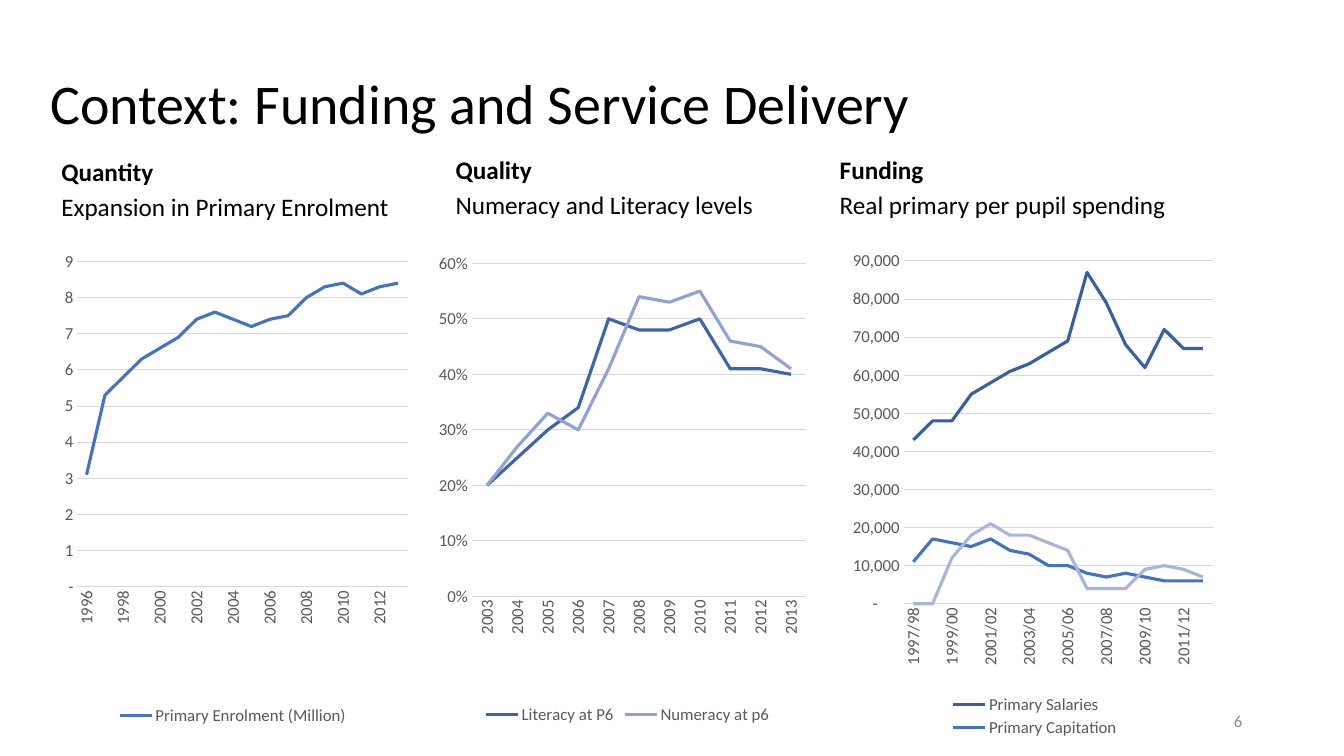
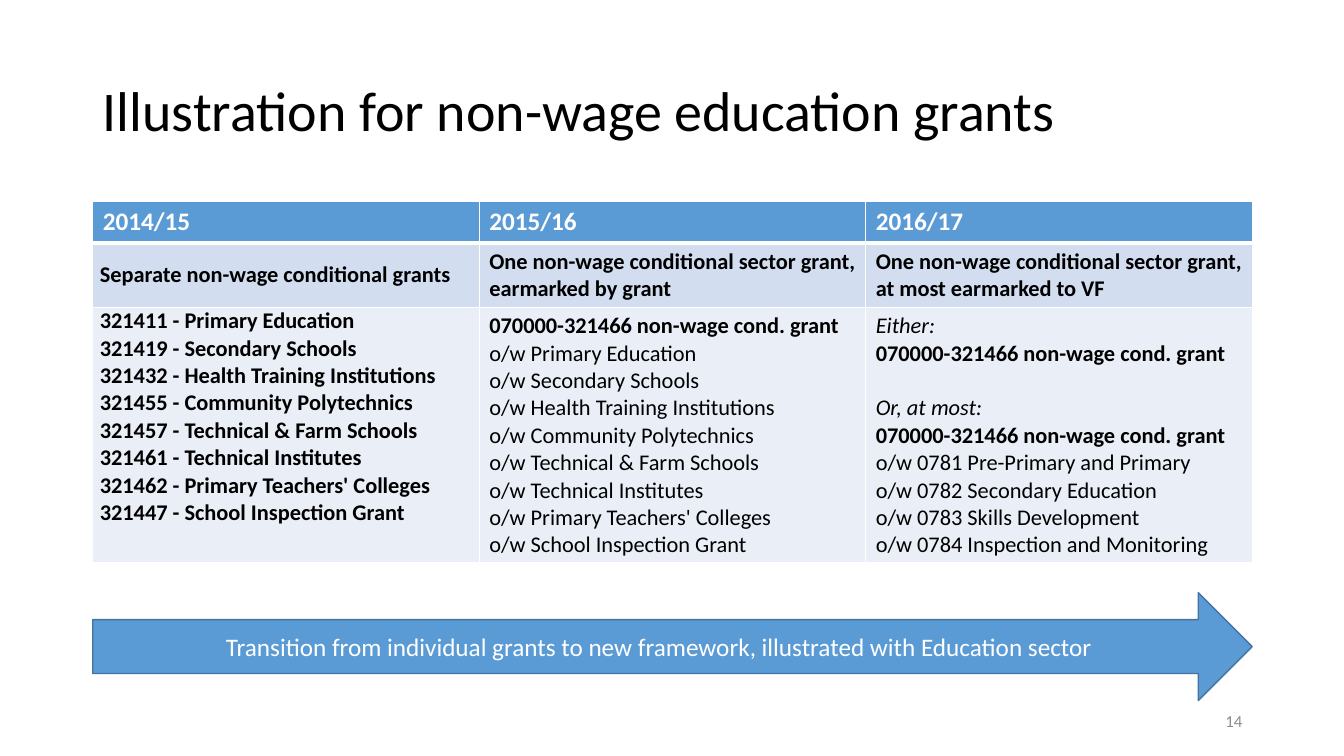
from lxml import etree
from pptx import Presentation
from pptx.chart.data import CategoryChartData
from pptx.dml.color import RGBColor
from pptx.enum import chart as ce, shapes, text
from pptx.oxml import parse_xml
from pptx.oxml.ns import nsdecls, qn
from pptx.util import Inches, Pt

BLACK = RGBColor(0x00, 0x00, 0x00)
WHITE = RGBColor(0xFF, 0xFF, 0xFF)
NUMBER_GREY = RGBColor(0x8C, 0x8C, 0x8C)
AXIS_GREY = RGBColor(0x59, 0x59, 0x59)
GRID_GREY = RGBColor(0xD9, 0xD9, 0xD9)
HEADER_BLUE = RGBColor(0x5B, 0x9B, 0xD5)
ARROW_EDGE = RGBColor(0x43, 0x73, 0x9E)
BAND_DARK = RGBColor(0xD2, 0xDE, 0xEF)
BAND_LIGHT = RGBColor(0xEA, 0xEF, 0xF7)
SERIES_BLUE = RGBColor(0x44, 0x72, 0xC4)
SALARY_BLUE = RGBColor(0x38, 0x5F, 0xA3)
DEVELOPMENT_BLUE = RGBColor(0xA8, 0xB5, 0xDB)
LITERACY_BLUE = RGBColor(0x3C, 0x65, 0xAE)
NUMERACY_BLUE = RGBColor(0x90, 0xA2, 0xD3)


def set_font(font, size, color, bold=False, italic=False):
    font.name, font.size, font.bold, font.italic = "Calibri", Pt(size), bold, italic
    font.color.rgb = color


def set_layout(parent, index, frame, inner=False):
    """Give a plot area or legend a fixed place, in fractions of the chart."""
    for old in parent.findall(qn("c:layout")):
        parent.remove(old)
    target = '<c:layoutTarget val="inner"/>' if inner else ""
    modes = '<c:xMode val="edge"/><c:yMode val="edge"/>'
    sizes = "".join(f'<c:{key} val="{value}"/>' for key, value in zip("xywh", frame))
    parent.insert(index, parse_xml(
        f'<c:layout {nsdecls("c")}><c:manualLayout>{target}{modes}{sizes}'
        "</c:manualLayout></c:layout>"))


def set_borders(cell, bottom):
    props = cell._tc.get_or_add_tcPr()
    for side, width in (("L", 1), ("R", 1), ("T", 1), ("B", bottom)):
        line = etree.SubElement(props, qn(f"a:ln{side}"), w=str(Pt(width)))
        fill = etree.SubElement(line, qn("a:solidFill"))
        etree.SubElement(fill, qn("a:srgbClr"), val=str(WHITE))


class Deck:
    def __init__(self):
        self.deck = Presentation()
        self.deck.slide_width, self.deck.slide_height = Inches(13.33), Inches(7.5)
        self.page = None

    def add_page(self, title, left, top, number):
        self.page = self.deck.slides.add_slide(self.deck.slide_layouts[5])
        box = self.page.shapes.title
        box.left, box.top = Inches(left), Inches(top)
        box.width, box.height = Inches(11.5), Inches(1.45)
        box.text_frame.text = title
        box.text_frame.vertical_anchor = text.MSO_ANCHOR.MIDDLE
        para = box.text_frame.paragraphs[0]
        para.alignment, para.line_spacing = text.PP_ALIGN.LEFT, 0.9
        set_font(para.font, 40, BLACK)
        # Page number
        frame = self.add_box(9.42, 6.95, 3, 0.4)
        frame.vertical_anchor = text.MSO_ANCHOR.MIDDLE
        para = frame.paragraphs[0]
        para.text, para.alignment = number, text.PP_ALIGN.RIGHT
        set_font(para.font, 12, NUMBER_GREY)

    def add_box(self, left, top, width, height):
        box = self.page.shapes.add_textbox(
            Inches(left), Inches(top), Inches(width), Inches(height))
        box.text_frame.word_wrap = True
        return box.text_frame

    def add_heading(self, left, top, width, heading, subtitle):
        frame = self.add_box(left, top, width, 0.8)
        frame.text = f"{heading}\n{subtitle}"
        first, second = frame.paragraphs
        set_font(first.font, 18, BLACK, bold=True)
        set_font(second.font, 18, BLACK)
        second.space_before = Pt(3.6)

    def add_line_chart(self, place, categories, series, plot, number_format,
                       maximum, step, label_skip=1, legend_place=None):
        data = CategoryChartData()
        data.categories = categories
        for name, _, values in series:
            data.add_series(name, values)
        chart = self.page.shapes.add_chart(
            ce.XL_CHART_TYPE.LINE, *map(Inches, place), data).chart
        chart.has_title = False
        set_font(chart.font, 10, BLACK)
        set_layout(chart._chartSpace.chart.plotArea, 0, plot, inner=True)
        chart.plots[0].vary_by_categories = False
        for item, (_, color, _) in zip(chart.plots[0].series, series):
            item.smooth = False
            item.format.line.color.rgb = color
            item.format.line.width = Pt(2.25)
        # Axes
        for axis in (chart.category_axis, chart.value_axis):
            axis.major_tick_mark = axis.minor_tick_mark = ce.XL_TICK_MARK.NONE
            set_font(axis.tick_labels.font, 12, AXIS_GREY)
        years, scale = chart.category_axis, chart.value_axis
        years.format.line.color.rgb = GRID_GREY
        years.format.line.width = Pt(0.75)
        years._element.find(qn("c:txPr")).find(qn("a:bodyPr")).set("rot", "-5400000")
        skip = parse_xml(f'<c:tickLblSkip {nsdecls("c")} val="{label_skip}"/>')
        years._element.find(qn("c:noMultiLvlLbl")).addprevious(skip)
        scale.minimum_scale, scale.maximum_scale = 0, maximum
        scale.major_unit = step
        scale.format.line.fill.background()
        scale.major_gridlines.format.line.color.rgb = GRID_GREY
        scale.major_gridlines.format.line.width = Pt(0.75)
        scale.tick_labels.number_format = number_format
        scale.tick_labels.number_format_is_linked = False
        # Legend
        chart.has_legend = True
        chart.legend.position = ce.XL_LEGEND_POSITION.BOTTOM
        chart.legend.include_in_layout = False
        set_font(chart.legend.font, 12, AXIS_GREY)
        if legend_place:
            set_layout(chart.legend._element, 1, legend_place)

    def add_table(self, left, top, width, heights, rows, fills):
        table = self.page.shapes.add_table(
            len(rows), len(rows[0]), Inches(left), Inches(top),
            Inches(width), Inches(sum(heights))).table
        for index, (cells, height, fill) in enumerate(zip(rows, heights, fills)):
            table.rows[index].height = Inches(height)
            for column, lines in enumerate(cells):
                cell = table.cell(index, column)
                set_borders(cell, 3 if index == 0 else 1)
                cell.fill.solid()
                cell.fill.fore_color.rgb = fill
                if index and column == 0:
                    cell.margin_left = cell.margin_right = Inches(0.07)
                    cell.margin_top = cell.margin_bottom = 0
                    if index == 1:
                        cell.vertical_anchor = text.MSO_ANCHOR.MIDDLE
                self.fill_cell(cell, lines, index == 0)

    def fill_cell(self, cell, lines, header):
        cell.text_frame.text = "\n".join(line for line, _ in lines)
        for para, (_, style) in zip(cell.text_frame.paragraphs, lines):
            set_font(para.font, 18 if header else 16, WHITE if header else BLACK,
                     bold="bold" in style, italic="italic" in style)
            if "gap" in style:
                para.space_before = Pt(19.5)

    def add_arrow(self, left, top, width, height, label):
        arrow = self.page.shapes.add_shape(
            shapes.MSO_SHAPE.RIGHT_ARROW, Inches(left), Inches(top),
            Inches(width), Inches(height))
        arrow.shadow.inherit = False
        arrow.fill.solid()
        arrow.fill.fore_color.rgb = HEADER_BLUE
        arrow.line.color.rgb = ARROW_EDGE
        arrow.line.width = Pt(1)
        arrow.text_frame.text = label
        arrow.text_frame.vertical_anchor = text.MSO_ANCHOR.MIDDLE
        para = arrow.text_frame.paragraphs[0]
        para.alignment = text.PP_ALIGN.CENTER
        set_font(para.font, 18, WHITE)


def build_context(deck):
    deck.add_page("Context: Funding and Service Delivery", 0.4, 0.33, "6")
    deck.add_heading(0.51, 1.5, 3.5, "Quantity", "Expansion in Primary Enrolment")
    deck.add_heading(4.42, 1.48, 3.41, "Quality", "Numeracy and Literacy levels")
    deck.add_heading(8.23, 1.48, 3.75, "Funding", "Real primary per pupil spending")

    deck.add_line_chart(
        (0.43, 2.35, 3.76, 4.89), [str(year) for year in range(1996, 2014)],
        [("Primary Enrolment (Million)", SERIES_BLUE,
          (3.1, 5.3, 5.8, 6.3, 6.6, 6.9, 7.4, 7.6, 7.4, 7.2, 7.4, 7.5, 8, 8.3,
           8.4, 8.1, 8.3, 8.4))],
        (0.09, 0.05, 0.87, 0.66), '#,##0;-#,##0;"-"', 9, 1, label_skip=2)

    deck.add_line_chart(
        (4.34, 2.37, 3.77, 4.86), [str(year) for year in range(2003, 2014)],
        [("Literacy at P6", LITERACY_BLUE,
          (0.2, 0.25, 0.3, 0.34, 0.5, 0.48, 0.48, 0.5, 0.41, 0.41, 0.4)),
         ("Numeracy at p6", NUMERACY_BLUE,
          (0.2, 0.27, 0.33, 0.3, 0.41, 0.54, 0.53, 0.55, 0.46, 0.45, 0.41))],
        (0.09, 0.05, 0.88, 0.68), "0%", 0.6, 0.1)

    deck.add_line_chart(
        (8.35, 2.49, 3.83, 4.86),
        [f"{year}/{(year + 1) % 100:02d}" for year in range(1997, 2013)],
        [("Primary Salaries", SALARY_BLUE,
          (43000, 48000, 48000, 55000, 58000, 61000, 63000, 66000, 69000, 87000,
           79000, 68000, 62000, 72000, 67000, 67000)),
         ("Primary Capitation", SERIES_BLUE,
          (11000, 17000, 16000, 15000, 17000, 14000, 13000, 10000, 10000, 8000,
           7000, 8000, 7000, 6000, 6000, 6000)),
         ("Primary Development", DEVELOPMENT_BLUE,
          (0, 0, 12000, 18000, 21000, 18000, 18000, 16000, 14000, 4000, 4000,
           4000, 9000, 10000, 9000, 7000))],
        (0.16, 0.02, 0.8, 0.7), '#,##0;-#,##0;"-"??_)', 90000, 10000,
        label_skip=2, legend_place=(0.27, 0.9, 0.46, 0.1))


def build_grants(deck):
    deck.add_page("Illustration for non-wage education grants", 0.92, 0.4, "14")
    grants = (
        ("321411", "Primary Education"), ("321419", "Secondary Schools"),
        ("321432", "Health Training Institutions"),
        ("321455", "Community Polytechnics"),
        ("321457", "Technical & Farm Schools"), ("321461", "Technical Institutes"),
        ("321462", "Primary Teachers' Colleges"),
        ("321447", "School Inspection Grant"))
    functions = ("0781 Pre-Primary and Primary", "0782 Secondary Education",
                 "0783 Skills Development", "0784 Inspection and Monitoring")
    sector_grant = ("070000-321466 non-wage cond. grant", "bold")
    headers = [[(year, "bold")] for year in ("2014/15", "2015/16", "2016/17")]
    summaries = [[(summary, "bold")] for summary in (
        "Separate non-wage conditional grants",
        "One non-wage conditional sector grant, earmarked by grant",
        "One non-wage conditional sector grant, at most earmarked to VF")]
    details = [
        [(f"{code} - {name}", "bold") for code, name in grants],
        [sector_grant] + [(f"o/w {name}", "") for _, name in grants],
        [("Either:", "italic"), sector_grant, ("Or, at most:", "italic gap"),
         sector_grant] + [(f"o/w {name}", "") for name in functions]]
    deck.add_table(0.92, 2, 11.5, (0.41, 0.64, 2.53), [headers, summaries, details],
                   (HEADER_BLUE, BAND_DARK, BAND_LIGHT))
    deck.add_arrow(0.92, 5.88, 11.5, 1.07,
                   "Transition from individual grants to new framework, "
                   "illustrated with Education sector")


def main():
    deck = Deck()
    build_context(deck)
    build_grants(deck)
    deck.deck.save("out.pptx")


if __name__ == "__main__":
    main()
